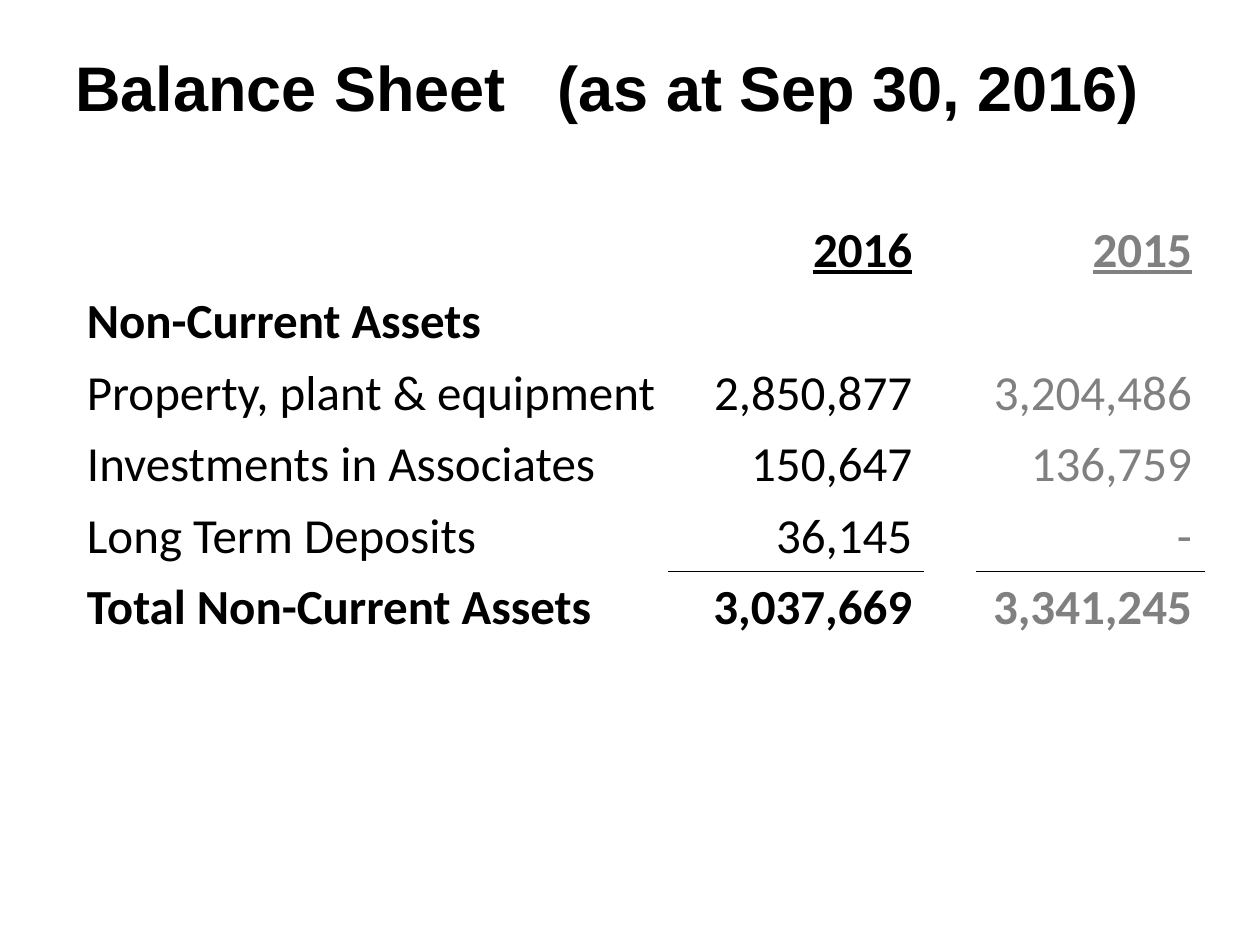
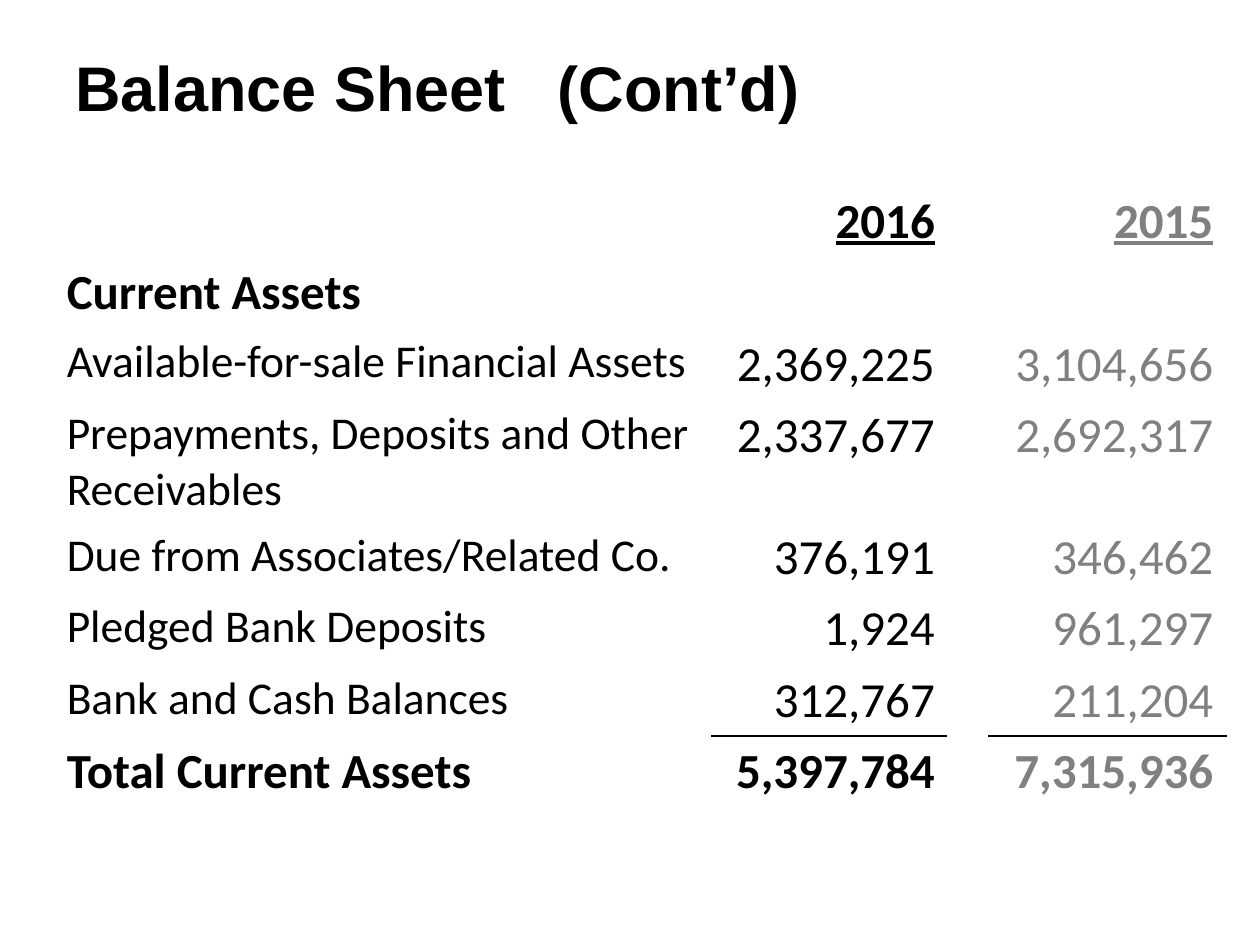
from lxml import etree
from pptx import Presentation
from pptx.dml.color import RGBColor
from pptx.enum.text import MSO_ANCHOR, PP_ALIGN
from pptx.oxml.ns import qn
from pptx.util import Inches, Pt

BLACK = RGBColor(0x00, 0x00, 0x00)
GRAY = RGBColor(0x80, 0x80, 0x80)
LEFT, RIGHT = PP_ALIGN.LEFT, PP_ALIGN.RIGHT
MIDDLE = MSO_ANCHOR.MIDDLE

TITLE_FONT = dict(name="Arial", size=Pt(36), bold=True)
TABLE_FONT = dict(name="Calibri", size=Pt(28), bold=False)
ROW_HEIGHT, LAST_ROW_HEIGHT = 0.52, 0.26
LABEL, THIS_YEAR, LAST_YEAR = 0, 1, 3  # column 2 is a gap


class BalanceSheetDeck:
    def __init__(self):
        self.prs = Presentation()
        self.prs.slide_width = Inches(10)
        self.prs.slide_height = Inches(7.5)
        self.s = None

    def add_slide(self, topic, detail):
        self.s = self.prs.slides.add_slide(self.prs.slide_layouts[6])
        sp = self.s.shapes.add_textbox(Inches(0.5), Inches(0.29), Inches(9.5), Inches(0.79))
        tf = sp.text_frame
        tf.word_wrap = True
        tf.vertical_anchor = MIDDLE
        p = tf.paragraphs[0]
        tabs = etree.SubElement(p._p.get_or_add_pPr(), qn("a:tabLst"))
        etree.SubElement(tabs, qn("a:tab"), pos=str(Inches(3.83)), algn="l")
        self.add_text(p, f"{topic}\t{detail}", BLACK, **TITLE_FONT)

    def add_text(self, p, text, color, align=LEFT, **font):
        p.alignment = align
        r = p.add_run()
        r.text = text
        for name, value in font.items():
            setattr(r.font, name, value)
        r.font.color.rgb = color

    def add_rule(self, cell, side):
        """Draw a thin black line on one side of a cell: T or B."""
        ln = etree.Element(qn(f"a:ln{side}"), w=str(Pt(1)))
        fill = etree.SubElement(ln, qn("a:solidFill"))
        etree.SubElement(fill, qn("a:srgbClr"), val=str(BLACK))
        cell._tc.get_or_add_tcPr().insert(0, ln)

    def add_statement(self, left, top, widths, heading, items, total, label_size=28):
        """Add a table of years, heading, items, ruled total and a closing empty row."""
        rows = [("", "2016", "2015"), (heading, "", ""), *items, total]
        total_row = len(rows) - 1
        heights = [ROW_HEIGHT] * len(rows) + [LAST_ROW_HEIGHT]
        table = self.s.shapes.add_table(
            len(heights), len(widths), Inches(left), Inches(top),
            Inches(sum(widths)), Inches(sum(heights))).table
        table.first_row = table.horz_banding = False
        for column, width in zip(table.columns, widths):
            column.width = Inches(width)
        for row, height in zip(table.rows, heights):
            row.height = Inches(height)
        for cell in table.iter_cells():
            cell.fill.background()

        for i, row in enumerate(rows):
            is_item = 1 < i < total_row
            for col, text in zip((LABEL, THIS_YEAR, LAST_YEAR), row):
                if not text:
                    continue
                font = dict(TABLE_FONT, bold=not is_item, underline=i == 0)
                if is_item and col == LABEL:
                    font["size"] = Pt(label_size)
                self.add_text(table.cell(i, col).text_frame.paragraphs[0], text,
                              GRAY if col == LAST_YEAR else BLACK,
                              LEFT if col == LABEL else RIGHT, **font)
        for col in (THIS_YEAR, LAST_YEAR):
            self.add_rule(table.cell(total_row - 1, col), "B")
            self.add_rule(table.cell(total_row, col), "T")


def main():
    deck = BalanceSheetDeck()

    deck.add_slide("Balance Sheet", "(as at Sep 30, 2016)")
    deck.add_statement(
        0.59, 1.7, (4.72, 2.03, 0.41, 1.81), "Non-Current Assets",
        [("Property, plant & equipment", "2,850,877", "3,204,486"),
         ("Investments in Associates", "150,647", "136,759"),
         ("Long Term Deposits", "36,145", "-")],
        ("Total Non-Current Assets", "3,037,669", "3,341,245"))

    deck.add_slide("Balance Sheet", "(Cont’d)")
    deck.add_statement(
        0.43, 1.47, (5.22, 1.87, 0.33, 1.88), "Current Assets",
        [("Available-for-sale Financial Assets", "2,369,225", "3,104,656"),
         ("Prepayments, Deposits and Other Receivables", "2,337,677", "2,692,317"),
         ("Due from Associates/Related Co.", "376,191", "346,462"),
         ("Pledged Bank Deposits", "1,924", "961,297"),
         ("Bank and Cash Balances", "312,767", "211,204")],
        ("Total Current Assets", "5,397,784", "7,315,936"), label_size=26)

    deck.prs.save("out.pptx")


if __name__ == "__main__":
    main()
